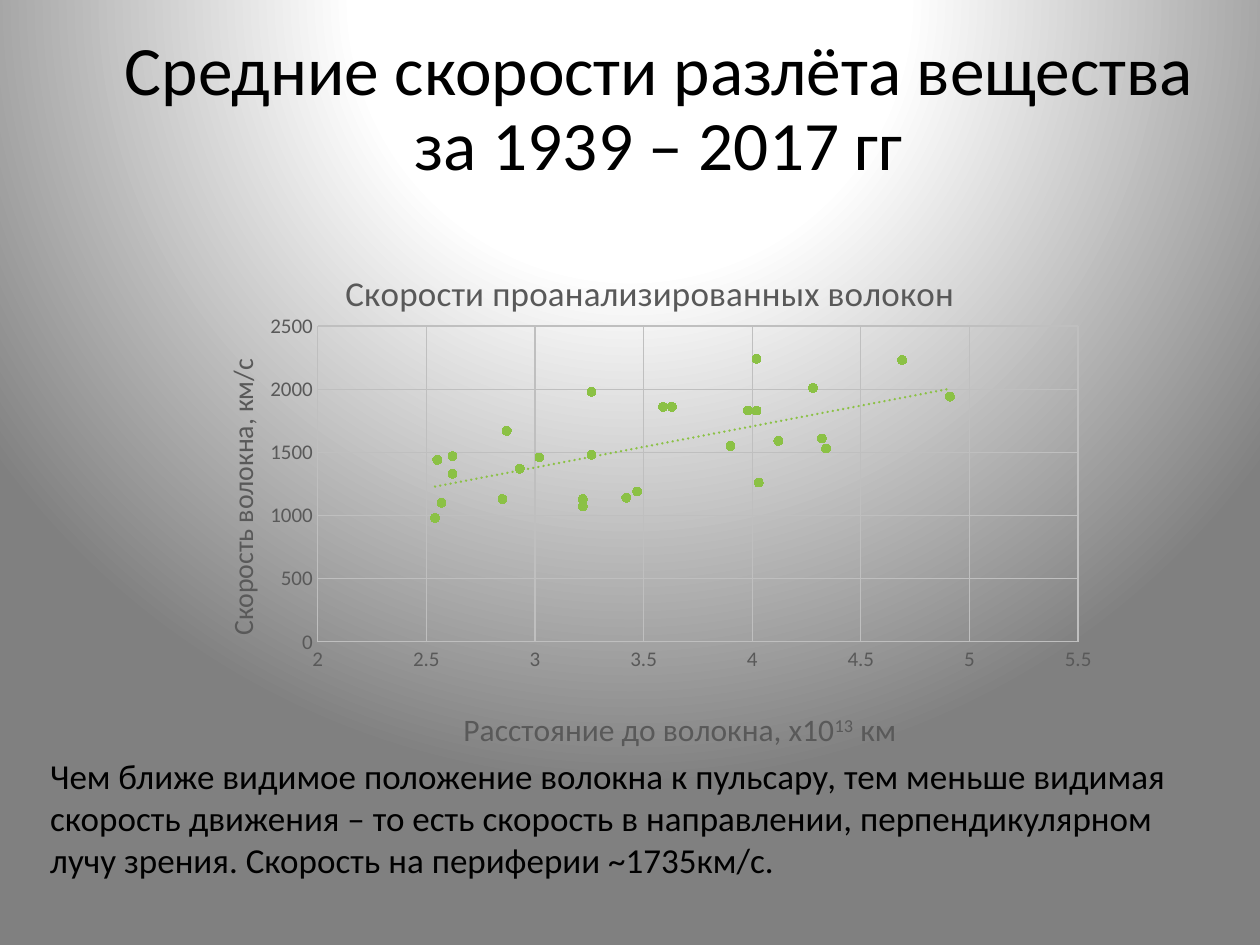
from lxml import etree
from pptx import Presentation
from pptx.chart.data import XyChartData
from pptx.dml.color import RGBColor
from pptx.enum.chart import XL_CHART_TYPE, XL_MARKER_STYLE, XL_TICK_MARK
from pptx.enum.text import MSO_ANCHOR, MSO_AUTO_SIZE, PP_ALIGN
from pptx.oxml import parse_xml
from pptx.oxml.ns import nsdecls, qn
from pptx.util import Inches, Pt

SCATTER = XL_CHART_TYPE.XY_SCATTER
CIRCLE = XL_MARKER_STYLE.CIRCLE
NO_TICK = XL_TICK_MARK.NONE
MIDDLE = MSO_ANCHOR.MIDDLE
NO_FIT = MSO_AUTO_SIZE.NONE
CENTER = PP_ALIGN.CENTER

FONT = "Calibri"
BLACK = RGBColor(0x00, 0x00, 0x00)
WHITE = RGBColor(0xFF, 0xFF, 0xFF)
SHADE = RGBColor(0x80, 0x80, 0x80)
LABEL = RGBColor(0x59, 0x59, 0x59)
GRID = RGBColor(0xBF, 0xBF, 0xBF)
GREEN = RGBColor(0x8B, 0xC1, 0x45)

# (distance, speed) of each filament
FILAMENTS = [
    (4.91, 1940), (4.28, 2010), (2.62, 1470), (3.9, 1550), (3.26, 1980),
    (2.87, 1670), (3.26, 1480), (3.22, 1070), (3.22, 1130), (3.59, 1860),
    (3.98, 1830), (4.02, 1830), (4.34, 1530), (4.69, 2230), (3.42, 1140),
    (4.32, 1610), (4.02, 2240), (2.54, 980), (2.62, 1330), (3.63, 1860),
    (2.85, 1130), (2.57, 1100), (2.93, 1370), (2.55, 1440), (4.03, 1260),
    (3.47, 1190), (4.12, 1590), (3.02, 1460),
]


def style_font(font, size, color):
    font.name = FONT
    font.size = Pt(size)
    font.bold = False
    font.color.rgb = color


def add_span(para, text, size, color):
    span = para.add_run()
    span.text = text
    style_font(span.font, size, color)
    return span


def paint_background(page):
    """Radial gradient centred above the top edge of the slide."""
    page.background.fill.solid()
    solid = page.element.find(".//" + qn("a:solidFill"))
    stops = "".join(
        f'<a:gs pos="{percent * 1000}"><a:srgbClr val="{color}"/></a:gs>'
        for percent, color in ((0, WHITE), (35, WHITE), (100, SHADE)))
    solid.getparent().replace(solid, parse_xml(
        f'<a:gradFill {nsdecls("a")} rotWithShape="1"><a:gsLst>{stops}</a:gsLst>'
        '<a:path path="circle"><a:fillToRect l="50000" t="-80000" '
        'r="50000" b="180000"/></a:path></a:gradFill>'))


def place_title(page, left, top, width, height):
    title = page.shapes.title
    title.left, title.top, title.width, title.height = left, top, width, height
    frame = title.text_frame
    frame.word_wrap = True
    frame.auto_size = NO_FIT
    frame.vertical_anchor = MIDDLE
    para = frame.paragraphs[0]
    para.alignment = CENTER
    para.line_spacing = 0.9
    add_span(para, "Средние скорости разлёта вещества", 39.6, BLACK)
    para.add_line_break()
    add_span(para, "за 1939 – 2017 гг", 39.6, BLACK)


def set_layout(parent, index, **fractions):
    """Fix a chart part at fractions of the chart's width and height."""
    old = parent.find(qn("c:layout"))
    if old is not None:
        parent.remove(old)
    layout = etree.Element(qn("c:layout"))
    manual = etree.SubElement(layout, qn("c:manualLayout"))
    if "w" in fractions:
        etree.SubElement(manual, qn("c:layoutTarget"), val="inner")
    for name in ("x", "y"):
        etree.SubElement(manual, qn(f"c:{name}Mode"), val="edge")
    for name, value in fractions.items():
        etree.SubElement(manual, qn(f"c:{name}"), val=str(value))
    parent.insert(index, layout)


def style_axis(axis, low, high, step):
    axis.minimum_scale, axis.maximum_scale, axis.major_unit = low, high, step
    axis.major_tick_mark = axis.minor_tick_mark = NO_TICK
    axis.has_major_gridlines = True
    for line in (axis.format.line, axis.major_gridlines.format.line):
        line.color.rgb = GRID
        line.width = Pt(0.75)
    axis.tick_labels.number_format = "General"
    axis.tick_labels.number_format_is_linked = False
    style_font(axis.tick_labels.font, 12, LABEL)


def style_series(series):
    series.format.line.fill.background()
    series.smooth = False
    series.marker.style = CIRCLE
    series.marker.size = 5
    series.marker.format.fill.solid()
    series.marker.format.fill.fore_color.rgb = GREEN
    series.marker.format.line.color.rgb = GREEN
    trend = parse_xml(
        f'<c:trendline {nsdecls("c", "a")}><c:spPr><a:ln w="{Pt(1.5)}" cap="rnd">'
        f'<a:solidFill><a:srgbClr val="{GREEN}"/></a:solidFill>'
        '<a:prstDash val="sysDot"/></a:ln></c:spPr>'
        '<c:trendlineType val="linear"/><c:dispRSqr val="0"/>'
        '<c:dispEq val="0"/></c:trendline>')
    series._element.find(qn("c:xVal")).addprevious(trend)


def add_speed_chart(page, left, top, width, height):
    data = XyChartData()
    points = data.add_series("Series 1")
    for distance, speed in FILAMENTS:
        points.add_data_point(distance, speed)
    chart = page.shapes.add_chart(SCATTER, left, top, width, height, data).chart
    chart.has_legend = False
    style_font(chart.font, 10, BLACK)
    chart.plots[0].vary_by_categories = False
    style_series(chart.plots[0].series[0])
    style_axis(chart.category_axis, 2, 5.5, 0.5)
    style_axis(chart.value_axis, 0, 2500, 500)

    heading = chart.chart_title.text_frame.paragraphs[0]
    add_span(heading, "Скорости проанализированных волокон", 20, LABEL)
    distance = chart.category_axis.axis_title.text_frame.paragraphs[0]
    add_span(distance, "Расстояние до волокна, х10", 18, LABEL)
    power = add_span(distance, "13", 18, LABEL)
    power._r.get_or_add_rPr().set("baseline", "30000")
    add_span(distance, " км", 18, LABEL)
    speed_title = chart.value_axis.axis_title.text_frame
    add_span(speed_title.paragraphs[0], "Скорость волокна, км/с", 16, LABEL)

    root = chart.element
    titles = list(root.iter(qn("c:title")))
    places = [(0.17, 0.06), (0.3, 0.91), (0.04, 0.24)]
    for title, (x, y) in zip(titles, places):
        set_layout(title, 1, x=x, y=y)
    body = titles[-1].find(".//" + qn("a:bodyPr"))
    body.set("rot", "-5400000")
    body.set("vert", "horz")
    set_layout(root.find(".//" + qn("c:plotArea")), 0,
               x=0.147, y=0.183, w=0.82, h=0.605)


def add_conclusion(page, left, top, width, height):
    frame = page.shapes.add_textbox(left, top, width, height).text_frame
    frame.word_wrap = True
    add_span(frame.paragraphs[0],
             "Чем ближе видимое положение волокна к пульсару, тем меньше видимая "
             "скорость движения – то есть скорость в направлении, "
             "перпендикулярном лучу зрения. Скорость на периферии ~1735км/с.",
             20, BLACK)


def main():
    deck = Presentation()
    deck.slide_width, deck.slide_height = Inches(10), Inches(7.5)
    page = deck.slides.add_slide(deck.slide_layouts[5])
    paint_background(page)
    place_title(page, Inches(0.69), Inches(0.01), Inches(9.08), Inches(1.73))
    add_speed_chart(page, Inches(1.44), Inches(1.83), Inches(7.36), Inches(4.17))
    add_conclusion(page, Inches(0.3), Inches(5.94), Inches(9.47), Inches(1.11))
    deck.save("out.pptx")


if __name__ == "__main__":
    main()
